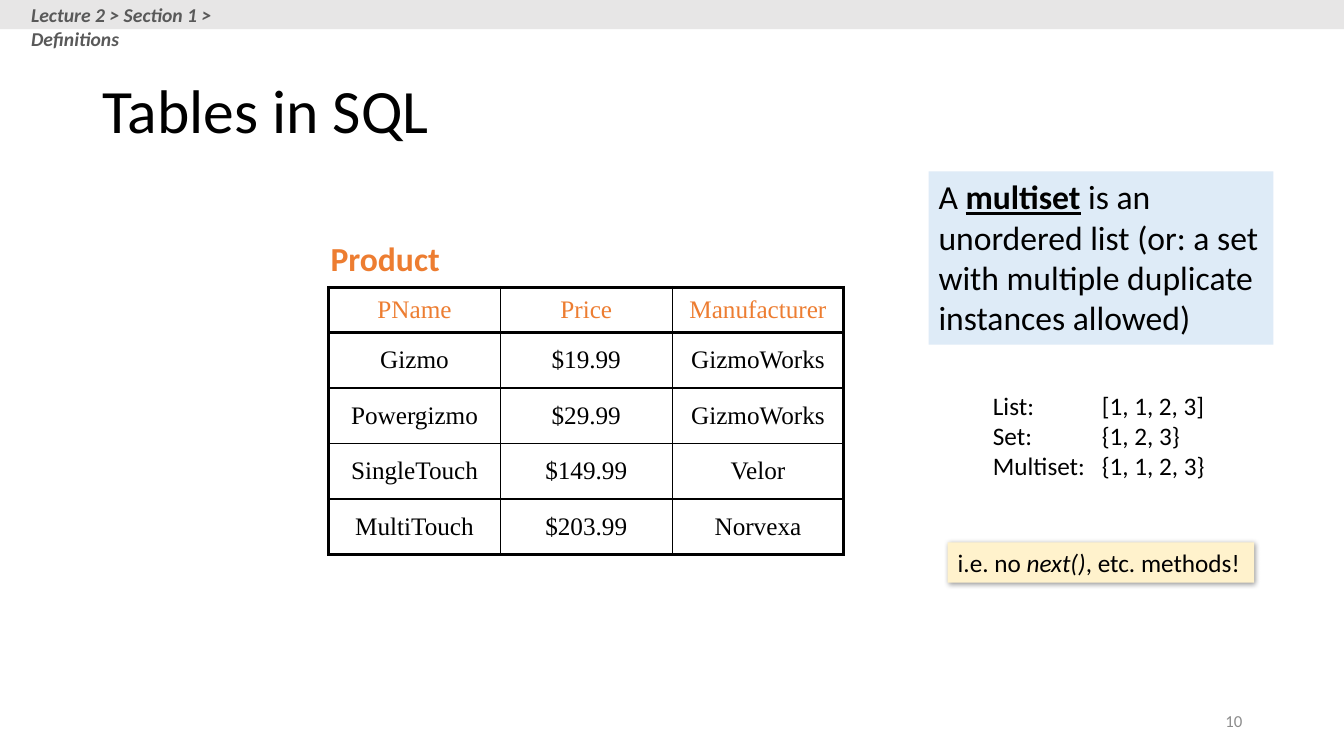
from lxml import etree
from pptx import Presentation
from pptx.dml.color import RGBColor
from pptx.enum.shapes import MSO_SHAPE
from pptx.enum.text import MSO_ANCHOR, PP_ALIGN
from pptx.oxml import parse_xml
from pptx.oxml.ns import nsdecls, qn
from pptx.util import Inches, Pt

RECT = MSO_SHAPE.RECTANGLE
TOP, MIDDLE = MSO_ANCHOR.TOP, MSO_ANCHOR.MIDDLE
LEFT, CENTER, RIGHT = PP_ALIGN.LEFT, PP_ALIGN.CENTER, PP_ALIGN.RIGHT
BLACK, ORANGE = "000000", "ED7D31"
THIN, THICK = 1, 2.25

PRODUCTS = [
    ["PName", "Price", "Manufacturer"],
    ["Gizmo", "$19.99", "GizmoWorks"],
    ["Powergizmo", "$29.99", "GizmoWorks"],
    ["SingleTouch", "$149.99", "Velor"],
    ["MultiTouch", "$203.99", "Norvexa"],
]
COLLECTIONS = [
    "List:\t[1, 1, 2, 3]",
    "Set:\t{1, 2, 3}",
    "Multiset:\t{1, 1, 2, 3}",
]


def rgb(value):
    return RGBColor.from_string(value)


def add_run(p, text, size, color=BLACK, style="", font="Calibri"):
    r = p.add_run()
    r.text = text
    r.font.name = font
    r.font.size = Pt(size)
    r.font.color.rgb = rgb(color)
    r.font.bold = "b" in style
    r.font.italic = "i" in style
    r.font.underline = "u" in style


def write(tf, paragraphs, size, color=BLACK, align=LEFT, anchor=TOP, wrap=True):
    tf.word_wrap = wrap
    tf.vertical_anchor = anchor
    for i, runs in enumerate(paragraphs):
        p = tf.add_paragraph() if i else tf.paragraphs[0]
        p.alignment = align
        for text, style in runs:
            add_run(p, text, size, color, style)


def add_text(s, box, paragraphs, size, **options):
    tf = s.shapes.add_textbox(*map(Inches, box)).text_frame
    write(tf, paragraphs, size, **options)
    return tf


def add_panel(s, box, fill):
    sp = s.shapes.add_shape(RECT, *map(Inches, box))
    sp.shadow.inherit = False
    sp.fill.solid()
    sp.fill.fore_color.rgb = rgb(fill)
    sp.line.fill.background()
    return sp


def add_shadow(sp):
    effects = sp._element.spPr.find(qn("a:effectLst"))
    effects.append(parse_xml(
        f'<a:outerShdw {nsdecls("a")} blurRad="{Pt(4)}" dist="{Pt(1)}" '
        'dir="2700000" algn="tl" rotWithShape="0"><a:srgbClr val="000000">'
        '<a:alpha val="40000"/></a:srgbClr></a:outerShdw>'))


def set_tab(p, position):
    tabs = etree.SubElement(p._p.get_or_add_pPr(), qn("a:tabLst"))
    etree.SubElement(tabs, qn("a:tab"), pos=str(Inches(position)), algn="l")


def set_borders(cell, widths):
    tcPr = cell._tc.get_or_add_tcPr()
    for i, (side, width) in enumerate(zip("LRTB", widths)):
        tcPr.insert(i, parse_xml(
            f'<a:ln{side} {nsdecls("a")} w="{Pt(width)}"><a:solidFill>'
            f'<a:srgbClr val="{BLACK}"/></a:solidFill></a:ln{side}>'))


def add_product_table(s):
    rows, cols = len(PRODUCTS), len(PRODUCTS[0])
    frame = s.shapes.add_table(rows, cols, Inches(3.26), Inches(2.85),
                               Inches(5.11), Inches(2.66))
    table = frame.table
    table.first_row = table.horz_banding = False
    for column in table.columns:
        column.width = Inches(5.11 / cols)
    for i, values in enumerate(PRODUCTS):
        table.rows[i].height = Inches(0.55 if i else 0.45)
        for j, value in enumerate(values):
            cell = table.cell(i, j)
            cell.fill.background()
            cell.vertical_anchor = MIDDLE
            p = cell.text_frame.paragraphs[0]
            p.alignment = CENTER
            add_run(p, value, 18, BLACK if i else ORANGE, font="Times New Roman")
            heavy = (j == 0, j == cols - 1, i <= 1, i in (0, rows - 1))
            set_borders(cell, [THICK if h else THIN for h in heavy])


def main():
    prs = Presentation()
    prs.slide_width, prs.slide_height = Inches(13.33), Inches(7.5)
    s = prs.slides.add_slide(prs.slide_layouts[6])

    add_text(s, (9.42, 6.95, 3, 0.4), [[("10", "")]], 12,
             color="8C8C8C", align=RIGHT, anchor=MIDDLE)
    title = add_text(s, (0.92, 0.4, 11.5, 1.45), [[("Tables in SQL", "")]], 44,
                     anchor=MIDDLE)
    title.paragraphs[0].line_spacing = 0.9

    add_product_table(s)
    add_text(s, (3.18, 2.31, 1.3, 0.5), [[("Product", "b")]], 24,
             color=ORANGE, wrap=False)

    definition = add_panel(s, (9.21, 1.7, 3.42, 1.72), "DEEBF7")
    write(definition.text_frame, [[
        ("A ", ""), ("multiset", "bu"),
        (" is an unordered list (or: a set with multiple duplicate "
         "instances allowed)", "")]], 24)

    examples = add_text(s, (9.75, 3.82, 2.34, 1.01),
                        [[(line, "")] for line in COLLECTIONS], 18)
    for p in examples.paragraphs:
        set_tab(p, 1.08)

    note = add_panel(s, (9.4, 5.38, 3.04, 0.4), "FFF2CC")
    add_shadow(note)
    write(note.text_frame, [[("i.e. no ", ""), ("next()", "i"),
                             (", etc. methods!", "")]], 18, wrap=False)

    add_panel(s, (0, 0, 13.33, 0.29), "E7E6E6")
    add_text(s, (0.21, -0.02, 2.4, 0.34),
             [[("Lecture 2 > Section 1 > Definitions", "bi")]], 14,
             color="595959")
    prs.save("out.pptx")


if __name__ == "__main__":
    main()
